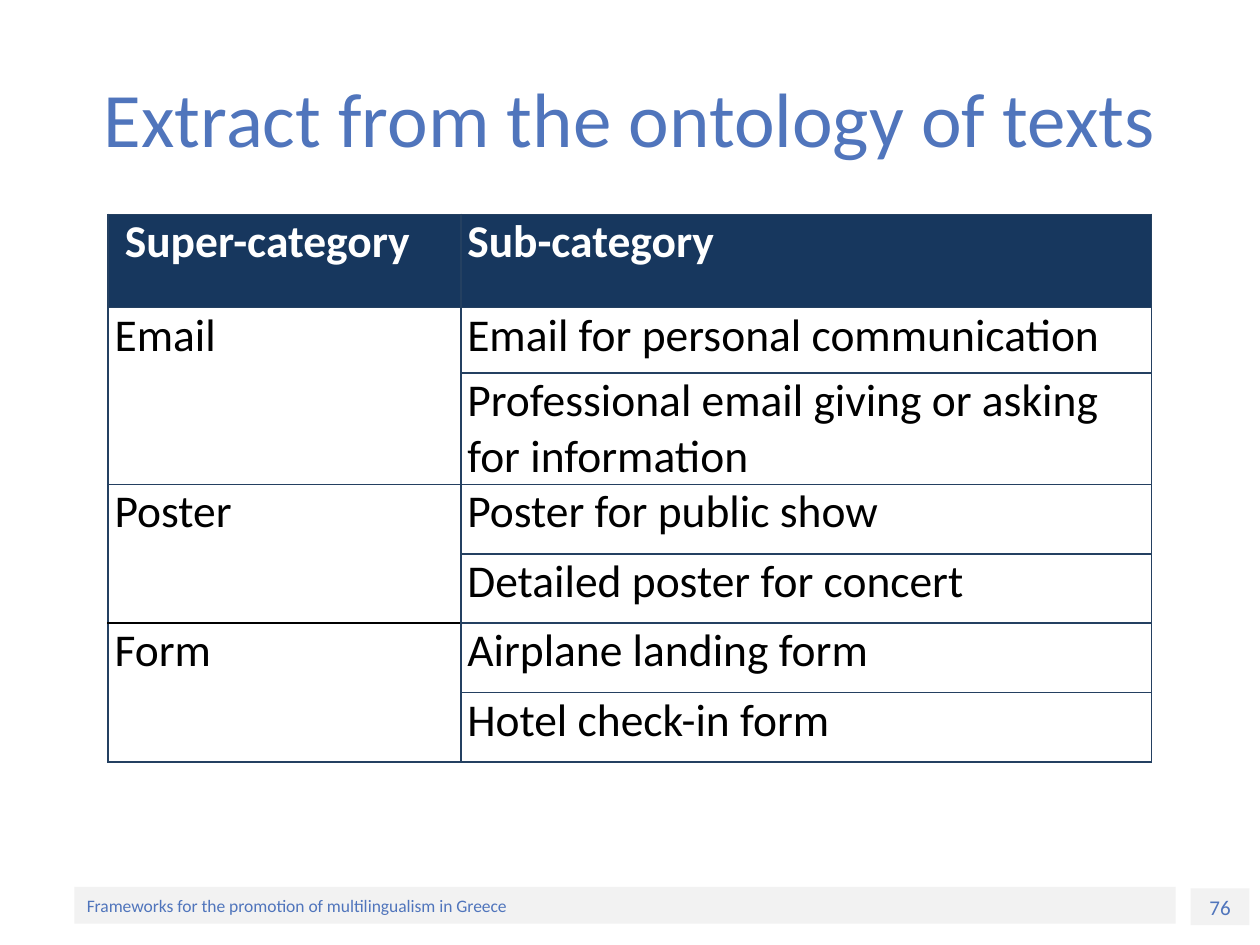
"""Build a slide with a table of text categories, a title and a footer."""
import lxml.etree
import pptx
import pptx.dml.color
import pptx.enum.shapes
import pptx.enum.text
import pptx.oxml.ns
import pptx.util

Cm = pptx.util.Cm
Pt = pptx.util.Pt
ALIGN = pptx.enum.text.PP_ALIGN
MIDDLE = pptx.enum.text.MSO_ANCHOR.MIDDLE

TITLE = "Extract from the ontology of texts"
HEADINGS = (" Super-category", "Sub-category")
CATEGORIES = {
    "Email": (
        "Email for personal communication",
        "Professional email giving or asking for information",
    ),
    "Poster": ("Poster for public show", "Detailed poster for concert"),
    "Form": ("Airplane landing form", "Hotel check-in form"),
}
FOOTERS = (
    ("76", (24, 17.91, 1.19, 0.74), 12, ALIGN.CENTER),
    ("Frameworks for the promotion of multilingualism in Greece",
     (1.5, 17.88, 22.2, 0.74), 10, ALIGN.LEFT),
)
COLUMN_WIDTHS = (7.11, 13.92)
ROW_HEIGHTS = (1.88, 1.32, 2.24, 1.4, 1.4, 1.4, 1.4)
FONT = "Calibri"
COLORS = {
    "accent": "5075BC",
    "header": "17375E",
    "border": "244061",
    "band": "F2F2F2",
    "white": "FFFFFF",
    "black": "000000",
}


def color(name):
    return pptx.dml.color.RGBColor.from_string(COLORS[name])


def style(para, size, name, align=ALIGN.LEFT, bold=False):
    para.alignment = align
    para.font.name = FONT
    para.font.size = Pt(size)
    para.font.bold = bold
    para.font.color.rgb = color(name)


def add_borders(cell, top="border", bottom="border"):
    properties = cell._tc.get_or_add_tcPr()
    qn = pptx.oxml.ns.qn
    sides = {"L": "border", "R": "border", "T": top, "B": bottom}
    for side, name in sides.items():
        line = lxml.etree.SubElement(properties, qn(f"a:ln{side}"), w=str(Pt(1)))
        fill = lxml.etree.SubElement(line, qn("a:solidFill"))
        lxml.etree.SubElement(fill, qn("a:srgbClr"), val=COLORS[name])


def fill_cell(cell, text, header=False):
    cell.margin_left = cell.margin_right = Cm(0.13)
    cell.margin_top = cell.margin_bottom = 0
    cell.fill.solid()
    cell.fill.fore_color.rgb = color("header" if header else "white")
    cell.text = text
    style(cell.text_frame.paragraphs[0], 26, "white" if header else "black", bold=header)


def add_footer(page, text, place, size, align):
    box = page.shapes.add_shape(
        pptx.enum.shapes.MSO_SHAPE.RECTANGLE, *map(Cm, place))
    box.shadow.inherit = False
    box.fill.solid()
    box.fill.fore_color.rgb = color("band")
    box.line.fill.background()
    box.text_frame.text = text
    box.text_frame.vertical_anchor = MIDDLE
    style(box.text_frame.paragraphs[0], size, "accent", align)


def add_title(page):
    title = page.shapes.title
    title.left, title.top, title.width, title.height = map(
        Cm, (1.27, 0.76, 22.86, 3.18))
    title.text_frame.text = TITLE
    title.text_frame.vertical_anchor = MIDDLE
    style(title.text_frame.paragraphs[0], 44, "accent", ALIGN.CENTER)


def add_category_table(page):
    table = page.shapes.add_table(
        len(ROW_HEIGHTS), len(COLUMN_WIDTHS), Cm(2.18), Cm(4.32),
        Cm(sum(COLUMN_WIDTHS)), Cm(sum(ROW_HEIGHTS))).table
    for column, width in zip(table.columns, COLUMN_WIDTHS):
        column.width = Cm(width)
    for row, height in zip(table.rows, ROW_HEIGHTS):
        row.height = Cm(height)

    rows = [HEADINGS]
    starts = {}
    for category, members in CATEGORIES.items():
        starts[category] = len(rows)
        rows += [(category if index == 0 else "", member)
                 for index, member in enumerate(members)]
    form_start = starts["Form"]
    for row_index, row in enumerate(rows):
        for column_index, text in enumerate(row):
            cell = table.cell(row_index, column_index)
            first = column_index == 0
            add_borders(
                cell,
                top="black" if first and row_index == form_start else "border",
                bottom="black" if first and starts["Poster"] <= row_index < form_start
                else "border")
            fill_cell(cell, text, header=row_index == 0)
    for category, start in starts.items():
        end = start + len(CATEGORIES[category]) - 1
        table.cell(start, 0).merge(table.cell(end, 0))


def main():
    deck = pptx.Presentation()
    deck.slide_width, deck.slide_height = Cm(25.4), Cm(19.05)
    page = deck.slides.add_slide(deck.slide_layouts[5])
    for footer in FOOTERS:
        add_footer(page, *footer)
    add_title(page)
    add_category_table(page)
    deck.save("out.pptx")


if __name__ == "__main__":
    main()
